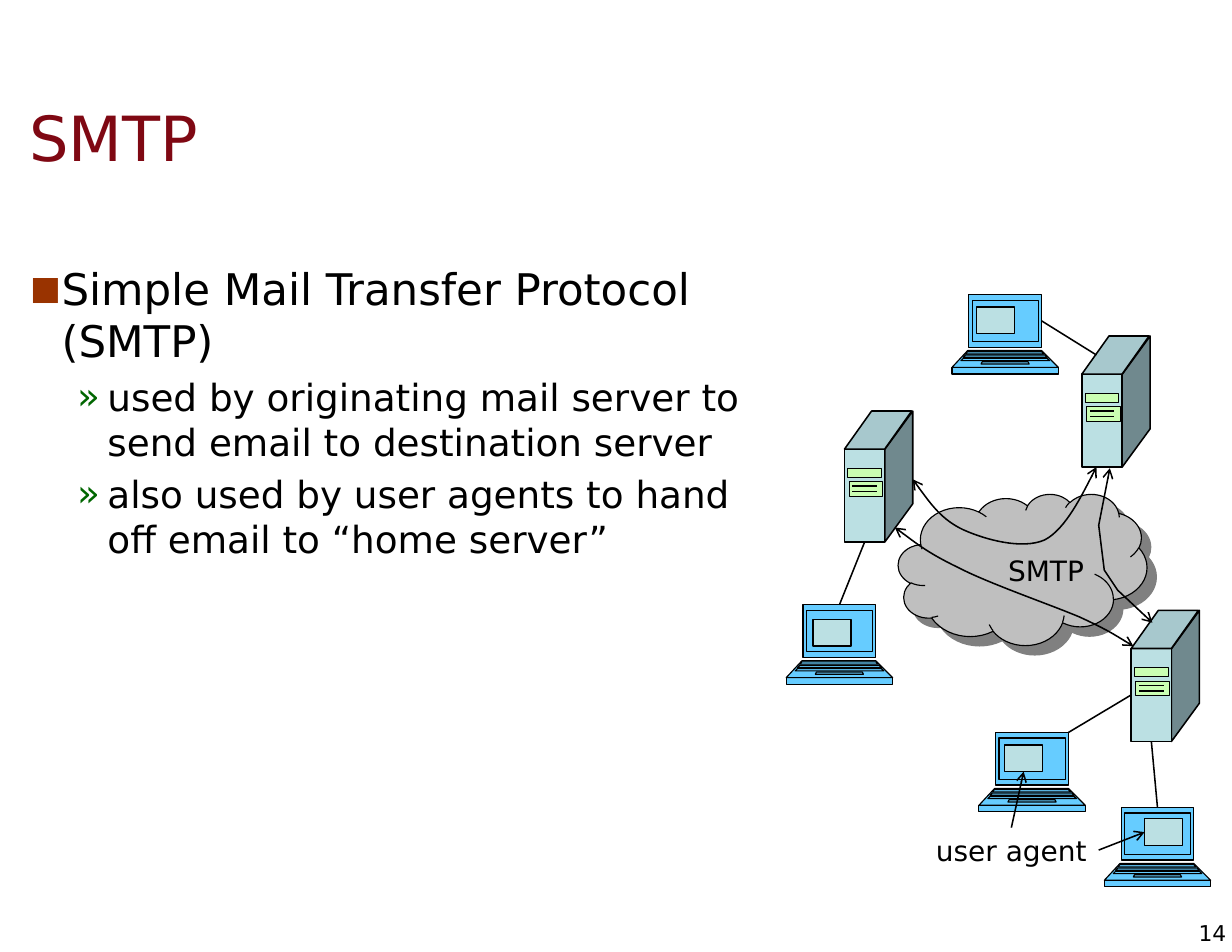
from lxml import etree
from pptx import Presentation
from pptx.dml.color import RGBColor
from pptx.enum.shapes import MSO_CONNECTOR, MSO_SHAPE
from pptx.enum.text import MSO_ANCHOR, PP_ALIGN
from pptx.oxml.ns import qn
from pptx.util import Cm, Pt

RECT, SLANT, CLOUD = MSO_SHAPE.RECTANGLE, MSO_SHAPE.PARALLELOGRAM, MSO_SHAPE.CLOUD
LINE = MSO_CONNECTOR.STRAIGHT
TOP, MID = MSO_ANCHOR.TOP, MSO_ANCHOR.MIDDLE
LEFT, CENTER, RIGHT = PP_ALIGN.LEFT, PP_ALIGN.CENTER, PP_ALIGN.RIGHT
NORTH, WEST, SOUTH, EAST = range(4)
FONT, BLACK, BLUE, PALE, GREEN = "DejaVu Sans", "000000", "66CCFF", "BBE0E3", "CAFEB2"

# Content; all positions are in inches
# Text box: words, frame, size, colour, alignment, anchor, insets
TITLE = ("SMTP", (0.15, 0.7, 10.53, 1.04), 40, "7F0813", LEFT, MID, (0.11, 0.06))
LABELS = [
    ("SMTP", (8.89, 4.89, 0.9, 0.4), 18, BLACK, CENTER, MID, (0.1, 0.05)),
    ("user agent", (8.25, 7.39, 1.56, 0.4), 18, BLACK, CENTER, MID, (0.1, 0.05)),
    ("14", (10.61, 8.21, 0.34, 0.24), 14, BLACK, RIGHT, MID, (0, 0)),
]
BODY = [
    (0, "Simple Mail Transfer Protocol\n(SMTP)"),
    (1, "used by originating mail server to send email to destination server"),
    (1, "also used by user agents to hand off email to “home server”"),
]
# Level: size, indent, hanging, bullet, bullet colour, bullet percent
LEVELS = [(28, 0.42, 0.28, "■", "993300", 75), (24, 0.83, 0.27, "»", "006600", 100)]

# Front corner of each server
SERVERS = {"west": (7.54, 4.01), "north": (9.66, 3.34), "south": (10.1, 5.79)}
# Corner of each laptop, then of the window on its screen
LAPTOPS = {
    "inner": (8.74, 6.54, 8.97, 6.65),
    "lower": (9.86, 7.21, 10.22, 7.31),
    "upper": (8.5, 2.63, 8.72, 2.74),
    "left": (7.02, 5.4, 7.26, 5.53),
}
# Keyboard strips: top edge and bottom edge as (left, right, y)
STRIPS = [
    ((0.14, 0.8, 0.5), (0, 0.95, 0.65)),
    ((0.14, 0.8, 0.51), (0.12, 0.82, 0.53)),
    ((0.27, 0.68, 0.6), (0.26, 0.69, 0.62)),
    ((0.12, 0.83, 0.54), (0.1, 0.85, 0.56)),
    ((0.1, 0.85, 0.57), (0.08, 0.87, 0.59)),
]
# Laptop, its side, server, its side, loose end
WIRES = [
    ("upper", EAST, "north", None, (9.79, 3.17)),
    ("lower", NORTH, "south", SOUTH, (10.28, 6.62)),
    ("inner", None, "south", WEST, (10.1, 6.2)),
    ("left", NORTH, "west", SOUTH, (7.72, 4.84)),
]
CURVES = [
    [(8.15, 4.28), (8.28, 4.46), (8.41, 4.64), (8.6, 4.73), (8.8, 4.82),
     (9.13, 4.91), (9.33, 4.82), (9.52, 4.72), (9.79, 4.17), (9.79, 4.17)],
    [(7.99, 4.71), (8.14, 4.82), (8.29, 4.94), (8.56, 5.07), (8.83, 5.21),
     (9.38, 5.4), (9.64, 5.51), (9.9, 5.63), (10.12, 5.77), (10.12, 5.77)],
]
BENT = [(10.29, 5.56), (9.98, 5.27), (9.86, 5.09), (9.81, 4.69), (9.91, 4.18)]
POINTERS = [((9.03, 7.39), "inner", SOUTH), ((9.81, 7.59), "lower", WEST)]


def inch(*vals):
    return [Cm(v * 2.54) for v in vals]


def tint(code):
    return RGBColor.from_string(code)


def sub(node, tag, **attrs):
    return etree.SubElement(node, qn(tag), attrs)


def style(shape, fill, width):
    shape.shadow.inherit = False
    if fill:
        shape.fill.solid()
        shape.fill.fore_color.rgb = tint(fill)
    else:
        shape.fill.background()
    shape.line.color.rgb = tint(BLACK)
    shape.line.width = Pt(width)
    return shape


def block(home, kind, box, fill, width=1):
    return style(home.add_shape(kind, *inch(*box)), fill, width)


def outline(home, pts, fill=None, width=1):
    pts = [tuple(inch(*p)) for p in pts]
    pen = home.build_freeform(*pts[0])
    pen.add_line_segments(pts[1:], close=bool(fill))
    return style(pen.convert_to_shape(), fill, width)


def line(home, start, end):
    link = home.add_connector(LINE, *inch(*start, *end))
    link.line.color.rgb = tint(BLACK)
    link.line.width = Pt(1)
    sub(link._element.spPr, "a:effectLst")
    return link


def tips(shape, *ends):
    for end in ends:
        sub(shape.line._get_or_add_ln(), "a:" + end, type="arrow")


def bend(shape):
    """Turn every three line segments into one cubic curve."""
    segs = list(shape._element.iter(qn("a:lnTo")))
    for i in range(0, len(segs), 3):
        cubic = etree.Element(qn("a:cubicBezTo"))
        segs[i].addprevious(cubic)
        for seg in segs[i:i + 3]:
            cubic.append(seg[0])
            seg.getparent().remove(seg)


def frame(home, box, anchor, pad, wrap):
    text = home.add_textbox(*inch(*box)).text_frame
    text.word_wrap = wrap
    text.vertical_anchor = anchor
    text.margin_left = text.margin_right = inch(pad[0])[0]
    text.margin_top = text.margin_bottom = inch(pad[1])[0]
    return text


def ink(para, size, color):
    para.font.size = Pt(size)
    for run in para.runs:
        run.font.name, run.font.size = FONT, Pt(size)
        run.font.color.rgb = tint(color)


def label(home, words, box, size, color, align, anchor, pad):
    text = frame(home, box, anchor, pad, False)
    text.text = words
    text.paragraphs[0].alignment = align
    ink(text.paragraphs[0], size, color)


def server(home, x, y):
    parts = home.add_group_shape().shapes
    side = block(parts, SLANT, (x - 0.1, y + 0.12, 1.17, 0.25), "70898E")
    side.adjustments[0] = 1.37
    side.rotation = 90
    side._element.spPr.xfrm.set("flipH", "1")
    front = block(parts, RECT, (x, y, 0.36, 0.83), PALE)
    lid = block(parts, SLANT, (x, y - 0.34, 0.6, 0.34), "A7C8CD")
    lid.adjustments[0] = 0.71
    lid.rotation = 180
    block(parts, RECT, (x + 0.03, y + 0.17, 0.3, 0.08), GREEN, 0.5)
    block(parts, RECT, (x + 0.04, y + 0.29, 0.3, 0.13), GREEN, 0.5)
    for dy in (0.33, 0.38):
        line(parts, (x + 0.07, y + dy), (x + 0.29, y + dy))
    return front


def laptop(home, x, y, wx, wy):
    parts = home.add_group_shape().shapes
    screen = block(parts, RECT, (x + 0.15, y, 0.65, 0.47), BLUE, 0.75)
    block(parts, RECT, (x + 0.18, y + 0.05, 0.59, 0.37), BLUE, 0.75)
    block(parts, RECT, (x, y + 0.65, 0.95, 0.06), BLUE, 0.75)
    for (a, b, top), (c, d, low) in STRIPS:
        pts = [(a, top), (b, top), (d, low), (c, low)]
        outline(parts, [(x + px, y + py) for px, py in pts], BLUE, 0.75)
    return screen, block(parts, RECT, (wx, wy, 0.34, 0.24), PALE)


deck = Presentation()
deck.slide_width, deck.slide_height = inch(11, 8.5)
shapes = deck.slides.add_slide(deck.slide_layouts[6]).shapes

# Title and bullets
label(shapes, *TITLE)
text = frame(shapes, (0.02, 2.28, 6.73, 6.17), TOP, (0.11, 0.06), True)
for i, (level, words) in enumerate(BODY):
    size, indent, hang, mark, color, part = LEVELS[level]
    para = text.add_paragraph() if i else text.paragraphs[0]
    para.text = words
    para.level = level
    props = para._p.get_or_add_pPr()
    props.set("marL", str(inch(indent)[0]))
    props.set("indent", str(-inch(hang)[0]))
    sub(sub(props, "a:buClr"), "a:srgbClr", val=color)
    sub(props, "a:buSzPct", val=str(part * 1000))
    sub(props, "a:buFont", typeface=FONT)
    sub(props, "a:buChar", char=mark)
    if i:
        para.space_before = Pt(4.8)
    ink(para, size, BLACK)

# Cloud with its shadow
cloud = block(shapes, CLOUD, (8.02, 4.41, 2.22, 1.35), "BFBFBF", 0.75)
cast = sub(cloud._element.spPr.find(qn("a:effectLst")), "a:outerShdw",
           dist=str(Pt(8.5)), dir="2700000", algn="ctr", rotWithShape="0")
sub(cast, "a:srgbClr", val="808080")

# Machines and the wires between them
fronts = {name: server(shapes, *spot) for name, spot in SERVERS.items()}
screens = {name: laptop(shapes, *spot) for name, spot in LAPTOPS.items()}
for name, out, host, into, end in WIRES:
    x, y = LAPTOPS[name][:2]
    wire = line(shapes, (x + 0.8, y), end)
    if out is not None:
        wire.begin_connect(screens[name][0], out)
    if into is not None:
        wire.end_connect(fronts[host], into)

# Mail routes
for pts in CURVES + [BENT]:
    route = outline(shapes, pts)
    if pts is not BENT:
        bend(route)
    tips(route, "headEnd", "tailEnd")

# Labels and their pointers
for item in LABELS:
    label(shapes, *item)
for start, name, side in POINTERS:
    arrow = line(shapes, start, start)
    arrow.end_connect(screens[name][1], side)
    tips(arrow, "tailEnd")

deck.save("out.pptx")
